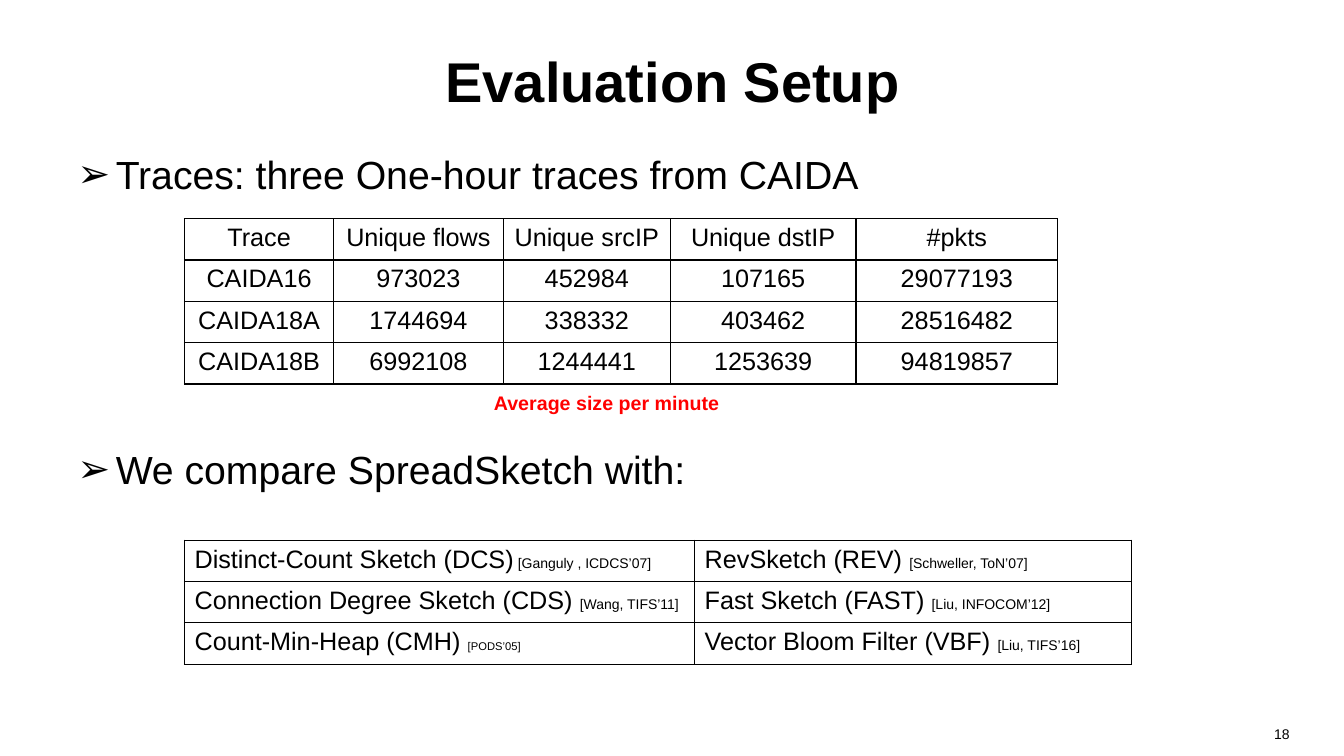
import pptx
import pptx.util
import pptx.dml.color
import pptx.enum.text
import pptx.oxml
from lxml import etree

PX = 9144  # 100 px to the inch
NS = 'xmlns:a="http://schemas.openxmlformats.org/drawingml/2006/main"'
ALIGN = pptx.enum.text.PP_ALIGN
ANCHOR = pptx.enum.text.MSO_ANCHOR


def add_run(p, text, size, color="000000", bold=False):
    r = p.add_run()
    r.text = text
    r.font.name = "Arial"
    r.font.size = pptx.util.Pt(size)
    r.font.bold = bold
    r.font.color.rgb = pptx.dml.color.RGBColor.from_string(color)


def add_grid(s, left, top, col_widths, rows, align):
    """Add a black-ruled table; each cell is a list of (text, size) runs."""
    row_height = 41
    frame = s.shapes.add_table(len(rows), len(col_widths), left * PX, top * PX,
                               sum(col_widths) * PX, len(rows) * row_height * PX)
    table = frame.table
    table.first_row = table.horz_banding = False
    for column, width in zip(table.columns, col_widths):
        column.width = width * PX
    for i, row in enumerate(rows):
        table.rows[i].height = row_height * PX
        for j, runs in enumerate(row):
            cell = table.cell(i, j)
            cell.fill.background()
            p = cell.text_frame.paragraphs[0]
            p.alignment = align
            for text, size in runs:
                add_run(p, text, size)
            tcPr = cell._tc.get_or_add_tcPr()
            for k, side in enumerate("LRTB"):
                tcPr.insert(k, pptx.oxml.parse_xml(
                    f'<a:ln{side} {NS} w="12700"><a:solidFill><a:srgbClr val="000000"/>'
                    f'</a:solidFill></a:ln{side}>'))


prs = pptx.Presentation()
prs.slide_width, prs.slide_height = 1333 * PX, 750 * PX
s = prs.slides.add_slide(prs.slide_layouts[5])

# Title
title = s.shapes.title
title.left, title.top, title.width, title.height = 67 * PX, 17 * PX, 1200 * PX, 125 * PX
tf = title.text_frame
tf.vertical_anchor = ANCHOR.MIDDLE
p = tf.paragraphs[0]
p.alignment = ALIGN.CENTER
add_run(p, "Evaluation Setup", 40, bold=True)

# Bulleted statements, spaced to leave room for the first table
tf = s.shapes.add_textbox(67 * PX, 144 * PX, 1200 * PX, 510 * PX).text_frame
tf.word_wrap = True
statements = [("Traces: three One-hour traces from CAIDA", 0),
              ("We compare SpreadSketch with:", 177)]
for i, (text, space) in enumerate(statements):
    p = tf.add_paragraph() if i else tf.paragraphs[0]
    p.space_before = pptx.util.Pt(space)
    pPr = p._p.get_or_add_pPr()
    pPr.set("marL", str(38 * PX))
    pPr.set("indent", str(-38 * PX))
    pPr.append(pptx.oxml.parse_xml(f'<a:buFont {NS} typeface="Arial"/>'))
    pPr.append(pptx.oxml.parse_xml(f'<a:buChar {NS} char="➢"/>'))
    add_run(p, text, 28)

# Trace statistics
traces = [
    ["Trace", "Unique flows", "Unique srcIP", "Unique dstIP", "#pkts"],
    ["CAIDA16", "973023", "452984", "107165", "29077193"],
    ["CAIDA18A", "1744694", "338332", "403462", "28516482"],
    ["CAIDA18B", "6992108", "1244441", "1253639", "94819857"],
]
add_grid(s, 183, 217, [148, 168, 166, 184, 200],
         [[[(text, 18)] for text in row] for row in traces], ALIGN.CENTER)

# Table caption
tf = s.shapes.add_textbox(480 * PX, 383 * PX, 245 * PX, 34 * PX).text_frame
tf.word_wrap = False
add_run(tf.paragraphs[0], "Average size per minute", 14, "FF0000", True)

# Compared sketches
sketches = [
    [[("Distinct-Count Sketch (DCS)", 18), (" [Ganguly , ICDCS’07]", 10)],
     [("RevSketch (REV) ", 18), ("[Schweller, ToN’07]", 10)]],
    [[("Connection Degree Sketch (CDS) ", 18), ("[Wang, TIFS’11]", 10)],
     [("Fast Sketch (FAST) ", 18), ("[Liu, INFOCOM’12]", 10)]],
    [[("Count-Min-Heap (CMH) ", 18), ("[PODS’05]", 8)],
     [("Vector Bloom Filter (VBF) ", 18), ("[Liu, TIFS’16]", 10)]],
]
add_grid(s, 183, 536, [506, 433], sketches, ALIGN.LEFT)

# Page number
tf = s.shapes.add_textbox(978 * PX, 715 * PX, 311 * PX, 35 * PX).text_frame
tf.word_wrap = True
p = tf.paragraphs[0]
p.alignment = ALIGN.RIGHT
add_run(p, "18", 10)

prs.save("out.pptx")
